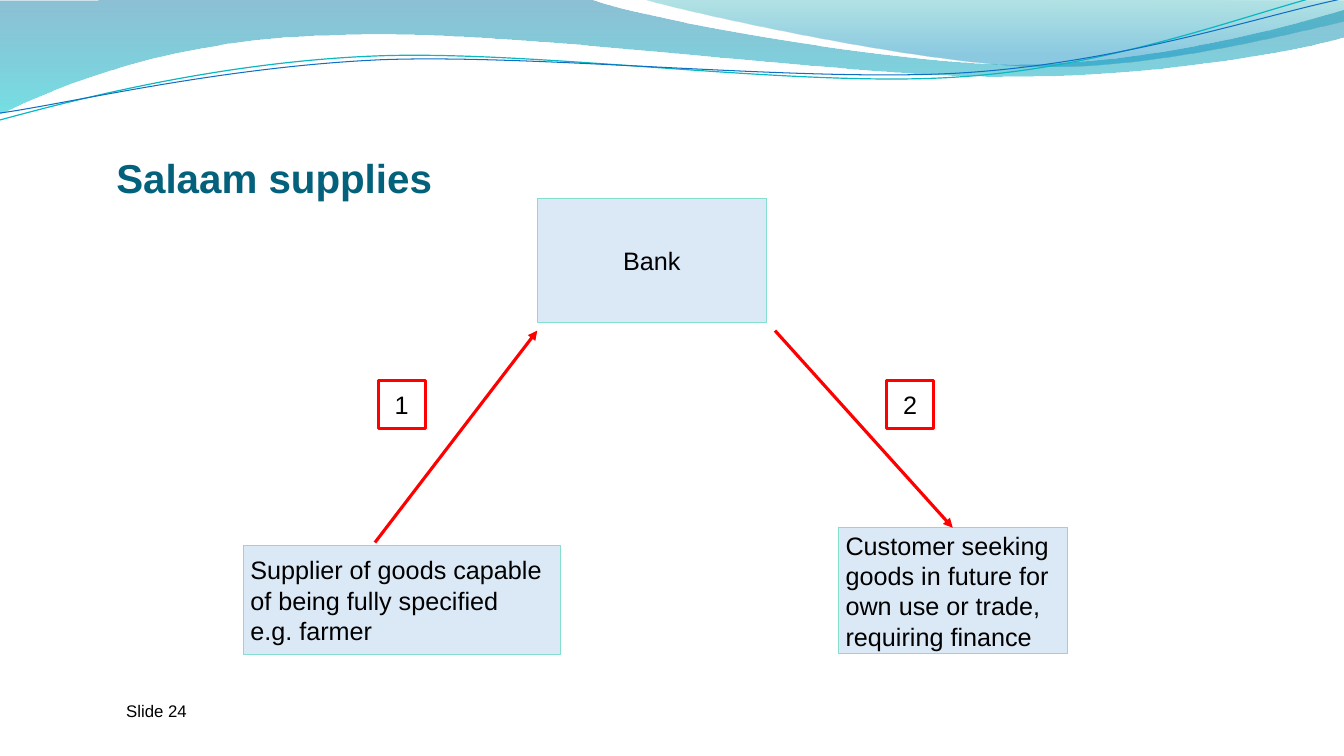
from dataclasses import dataclass

from lxml import etree
from pptx import Presentation
from pptx import util as u
from pptx.dml import color
from pptx.enum import shapes, text
from pptx.oxml import ns


@dataclass(frozen=True)
class Theme:
    """Colours, type sizes and line widths of the deck."""
    face: str = "Arial"
    ink: str = "000000"
    title: str = "04617B"
    blue: str = "0F6FC6"
    teal: str = "0AB8BF"
    mint: str = "85DFD0"
    red: str = "FF0000"
    deep: tuple = ((0, "0074A1", 45), (1, "00C6CF", 55))
    pale: tuple = ((0, "00A1A9", 30), (0.8, "008BBF", 45))
    head: float = 28.8
    body: float = 18
    small: float = 12
    thin: float = 0.75
    bold: float = 2.25


T = Theme()
LEFT, MID = text.PP_ALIGN.LEFT, text.PP_ALIGN.CENTER


def rgb(code):
    """Turn a hex code into a colour."""
    return color.RGBColor.from_string(code)


def fade(node, share):
    """Set the opacity in percent of the colour inside a node."""
    for tint in node.iter(ns.qn("a:srgbClr")):
        etree.SubElement(tint, ns.qn("a:alpha"), val=str(share * 1000))


def stroke(part, tint, width):
    """Give a shape or connector a solid line."""
    part.line.color.rgb = rgb(tint)
    part.line.width = u.Pt(width)


def write(frame, lines, size, tint=T.ink, align=LEFT, bold=False):
    """Write one paragraph with one run for each line."""
    frame.word_wrap = True
    frame.auto_size = text.MSO_AUTO_SIZE.NONE
    for i, words in enumerate(lines):
        para = frame.add_paragraph() if i else frame.paragraphs[0]
        para.alignment = align
        run = para.add_run()
        run.text = words
        font = run.font
        font.name, font.size, font.bold = T.face, u.Pt(size), bold
        font.color.rgb = rgb(tint)


def trace(slide, box, start, steps, close):
    """Draw an outline from straight (x, y) steps and six-number curves."""
    def spot(x, y):
        return u.Cm(box[0] + x), u.Cm(box[1] + y)

    pen = slide.shapes.build_freeform(*spot(*start))
    pen.add_line_segments([spot(*step[-2:]) for step in steps], close=close)
    shape = pen.convert_to_shape()
    shape.shadow.inherit = False
    legs = list(shape._element.iter(ns.qn("a:lnTo")))
    for leg, step in zip(legs, steps):
        if len(step) == 6:
            curve = etree.Element(ns.qn("a:cubicBezTo"))
            for i in (0, 2, 4):
                x, y = spot(*step[i:i + 2])
                etree.SubElement(curve, ns.qn("a:pt"), x=str(x - shape.left),
                                 y=str(y - shape.top))
            leg.getparent().replace(leg, curve)
    return shape


def waves(slide, box):
    """Draw the two shaded waves and two thin lines of the top band."""
    fills = (
        (T.deep, (0, 0), (
            (14.91, -0.03), (16.1, 0.43, 22.48, 1.6, 25.68, 1.6),
            (28.91, 1.6, 32.46, 0.66, 33.86, 0.23), (33.91, 0.91),
            (33.3, 1.12, 29.46, 1.93, 25.25, 1.91),
            (21.06, 1.91, 12.93, 0.71, 8.71, 0.86),
            (4.37, 0.91, 1.55, 2.11, -0.03, 2.87))),
        (T.pale, (16.23, -0.03), (
            (17.25, 0.28, 23.09, 1.57, 26.04, 1.65),
            (28.98, 1.75, 32.56, 0.81, 33.86, 0.53), (33.86, 0))),
    )
    for stops, start, steps in fills:
        shape = trace(slide, box, start, steps, True)
        shape.line.fill.background()
        shape.fill.gradient()
        shape.fill.gradient_angle = 270
        for stop, (place, tint, share) in zip(shape.fill.gradient_stops, stops):
            stop.position = place
            stop.color.rgb = rgb(tint)
            fade(stop.color._xFill, share)
    lines = (
        (T.teal, 0.85, (-0.08, 2.22), (
            (1.6, 1.85, 5.36, 1.03, 9.38, 1.05),
            (13.4, 1.06, 20.03, 2.36, 24.1, 2.27),
            (28.17, 2.21, 31.84, 0.9, 33.87, 0.55))),
        (T.blue, T.thin, (-0.04, 2.04), (
            (1.57, 1.9, 5.54, 1.14, 9.61, 1.15),
            (13.65, 1.19, 20.19, 2.23, 24.24, 2.17),
            (28.3, 2.11, 31.91, 1.06, 33.93, 0.75))),
    )
    for tint, width, start, steps in lines:
        shape = trace(slide, box, start, steps, False)
        shape.rotation = 357.3
        shape.fill.background()
        stroke(shape, tint, width)


def title(slide, box, words):
    """Place and format the slide title."""
    part = slide.shapes.title
    part.left, part.top, part.width, part.height = map(u.Cm, box)
    frame = part.text_frame
    frame.margin_left = frame.margin_right = frame.margin_bottom = 0
    frame.vertical_anchor = text.MSO_ANCHOR.BOTTOM
    write(frame, [words], T.head, T.title, bold=True)


def block(slide, box, lines, align, tint, width):
    """Draw an outlined box with text in its middle."""
    shape = slide.shapes.add_shape(shapes.MSO_SHAPE.RECTANGLE, *map(u.Cm, box))
    shape.shadow.inherit = False
    shape.fill.background()
    stroke(shape, tint, width)
    frame = shape.text_frame
    frame.margin_left = frame.margin_right = u.Cm(0.18)
    frame.margin_top = frame.margin_bottom = 0
    frame.vertical_anchor = text.MSO_ANCHOR.MIDDLE
    write(frame, lines, T.body, align=align)
    return shape


def arrow(slide, ends):
    """Draw a red arrow between two points."""
    line = slide.shapes.add_connector(
        shapes.MSO_CONNECTOR.STRAIGHT, *map(u.Cm, ends))
    stroke(line, T.red, T.bold)
    etree.SubElement(line.line._get_or_add_ln(), ns.qn("a:tailEnd"), type="triangle")
    etree.SubElement(line._element.spPr, ns.qn("a:effectLst"))


def flow(slide, box):
    """Draw the parties, the arrows between them and the step numbers."""
    left, top = box[:2]
    nodes = (
        (7.41, 0, 5.77, 3.12, MID, ["Bank"]),
        (0, 8.74, 8, 2.76, LEFT, ["Supplier of goods capable",
                                  "of being fully specified", "e.g. farmer"]),
        (15, 8.3, 5.77, 3.17, LEFT, ["Customer seeking", "goods in future for",
                                     "own use or trade,", "requiring finance"]),
    )
    for x, y, wide, high, align, lines in nodes:
        node = block(slide, (left + x, top + y, wide, high), lines, align,
                     T.mint, T.thin)
        node.fill.solid()
        node.fill.fore_color.rgb = rgb(T.blue)
        fade(node.fill.fore_color._xFill, 15)
    for ax, ay, bx, by in ((13.4, 3.33, 17.88, 8.3), (3.32, 8.67, 7.41, 3.33)):
        arrow(slide, (left + ax, top + ay, left + bx, top + by))
    for mark, x in (("1", 3.4), ("2", 16.21)):
        block(slide, (left + x, top + 4.58, 1.19, 1.23), [mark], MID, T.red, T.bold)


def foot(slide, box, words):
    """Write the slide number line."""
    part = slide.shapes.add_textbox(*map(u.Cm, box))
    write(part.text_frame, [words], T.small)


def main():
    """Build and save the slide."""
    deck = Presentation()
    deck.slide_width, deck.slide_height = u.Cm(33.87), u.Cm(19.05)
    slide = deck.slides.add_slide(deck.slide_layouts[5])
    waves(slide, (0, 0.01, 33.87, 3.02))
    title(slide, (2.93, 3.53, 8.79, 1.55), "Salaam supplies")
    flow(slide, (6.13, 5, 20.77, 11.5))
    foot(slide, (2.93, 17.53, 5.92, 1.02), "Slide 24")
    deck.save("out.pptx")


if __name__ == "__main__":
    main()
